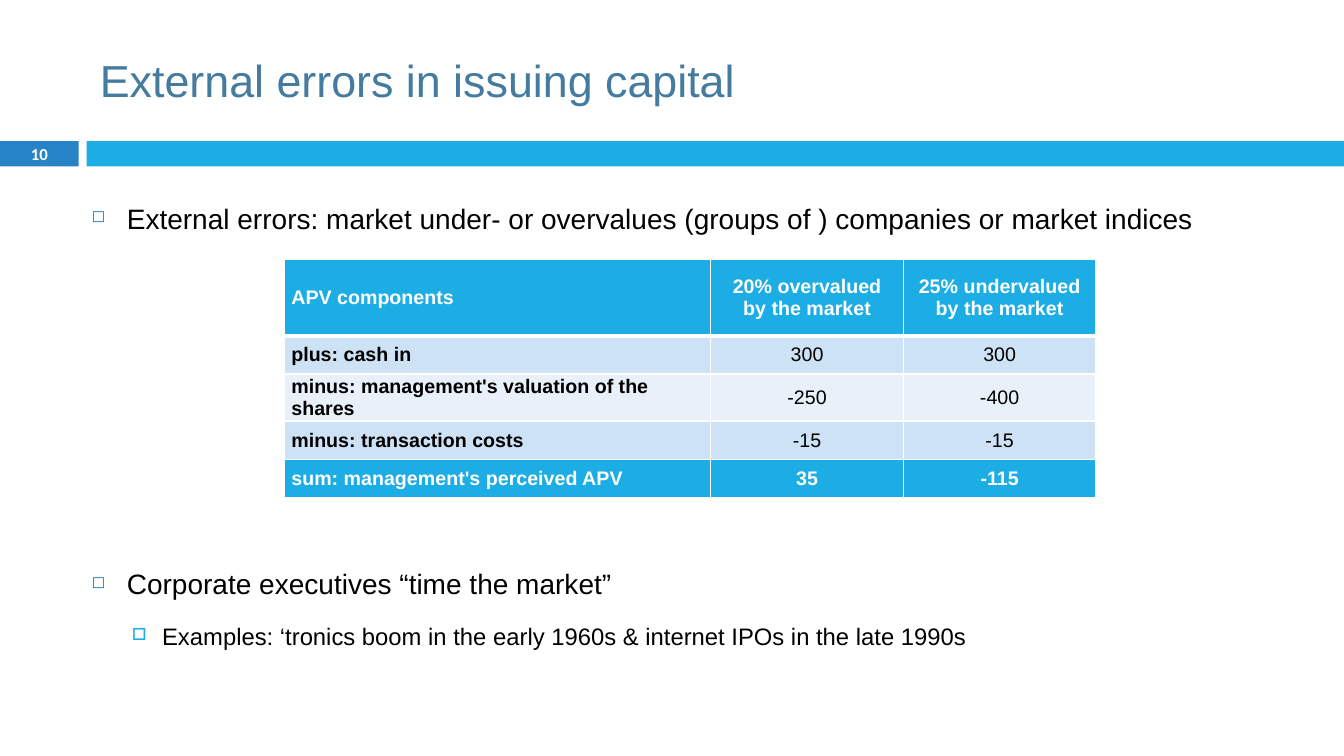
import pptx
import pptx.dml.color
import pptx.enum.shapes
import pptx.enum.text
import pptx.util
from lxml import etree
from pptx.oxml.ns import qn

WIDTH, HEIGHT = 13.33, 7.5
BLUE, CYAN, WHITE, BLACK = "2683C6", "1CADE4", "FFFFFF", "000000"
ALIGN = pptx.enum.text.PP_ALIGN
MIDDLE = pptx.enum.text.MSO_ANCHOR.MIDDLE
INCH, POINT = pptx.util.Inches, pptx.util.Pt

ROWS = [
    ("APV components", "20% overvalued\vby the market", "25% undervalued\vby the market"),
    ("plus: cash in", "300", "300"),
    ("minus: management's valuation of the shares", "-250", "-400"),
    ("minus: transaction costs", "-15", "-15"),
    ("sum: management's perceived APV", "35", "-115"),
]
COLUMN_WIDTHS = [4.23, 1.91, 1.91]
ROW_HEIGHTS = [0.76, 0.38, 0.38, 0.38, 0.38]
BANDS = ["CDE3F5", "E8F1FA"]

# Bullet levels: indents in inches, spacing in points, bullet size in percent
LEVELS = [
    dict(left=0.35, hang=0.35, before=7, bullet="◻", color=BLUE, percent=60, size=20),
    dict(left=0.7, hang=0.3, before=5.5, bullet="□", color=CYAN, percent=70, size=17),
]
TABLE_GAP = 225  # points left free for the table
POINTS = [
    (0, 0, "External errors: market under- or overvalues (groups of ) companies or market indices"),
    (0, TABLE_GAP, "Corporate executives “time the market”"),
    (1, 0, "Examples: ‘tronics boom in the early 1960s & internet IPOs in the late 1990s"),
]


def rgb(color):
    return pptx.dml.color.RGBColor.from_string(color)


def apply(target, values):
    for name, value in values.items():
        setattr(target, name, value)


def write(para, text, size, color, bold=False, font="Arial", **layout):
    """Fill one paragraph and format its text and layout."""
    para.text = text
    apply(para, layout)
    for span in para.runs:
        apply(span.font, dict(name=font, size=POINT(size), bold=bold))
        span.font.color.rgb = rgb(color)


def add_bar(page, left, width, color):
    bar = page.shapes.add_shape(pptx.enum.shapes.MSO_SHAPE.RECTANGLE,
                                INCH(left), INCH(1.4), INCH(width), INCH(0.25))
    bar.shadow.inherit = False
    bar.fill.solid()
    bar.fill.fore_color.rgb = rgb(color)
    bar.line.fill.background()
    return bar


def add_title(page, text):
    title = page.shapes.title
    apply(title, dict(left=INCH(0.89), top=INCH(0.25), width=INCH(11.89), height=INCH(1.08)))
    title.text_frame.vertical_anchor = MIDDLE
    write(title.text_frame.paragraphs[0], text, 32, "457B9E", alignment=ALIGN.LEFT)


def set_bullet(para, level):
    properties = para._p.get_or_add_pPr()
    properties.set("marL", str(INCH(level["left"])))
    properties.set("indent", str(-INCH(level["hang"])))
    color = etree.SubElement(properties, qn("a:buClr"))
    etree.SubElement(color, qn("a:srgbClr"), val=level["color"])
    etree.SubElement(properties, qn("a:buSzPct"), val=str(level["percent"] * 1000))
    etree.SubElement(properties, qn("a:buChar"), char=level["bullet"])


def add_bullets(page, points):
    box = page.shapes.add_textbox(INCH(0.81), INCH(1.78), INCH(11.36), INCH(5.39))
    frame = box.text_frame
    frame.word_wrap = True
    for index, (depth, gap, text) in enumerate(points):
        para = frame.add_paragraph() if index else frame.paragraphs[0]
        level = LEVELS[depth]
        write(para, text, level["size"], BLACK, level=depth, line_spacing=1.5,
              space_before=POINT(gap or level["before"]))
        set_bullet(para, level)


def set_borders(cell, widths):
    """Draw white borders; widths maps each side to points."""
    properties = cell._tc.get_or_add_tcPr()
    for index, (side, width) in enumerate(widths.items()):
        line = etree.Element(qn("a:ln" + side), w=str(POINT(width)))
        fill = etree.SubElement(line, qn("a:solidFill"))
        etree.SubElement(fill, qn("a:srgbClr"), val=WHITE)
        properties.insert(index, line)


def add_apv_table(page):
    last = len(ROWS) - 1
    table = page.shapes.add_table(len(ROWS), len(COLUMN_WIDTHS), INCH(2.82), INCH(2.57),
                                  INCH(sum(COLUMN_WIDTHS)), INCH(sum(ROW_HEIGHTS))).table
    for column, width in zip(table.columns, COLUMN_WIDTHS):
        column.width = INCH(width)
    for row, height in zip(table.rows, ROW_HEIGHTS):
        row.height = INCH(height)
    for r, texts in enumerate(ROWS):
        strong = r in (0, last)
        for c, text in enumerate(texts):
            cell = table.cell(r, c)
            apply(cell, dict(vertical_anchor=MIDDLE, margin_left=INCH(0.07),
                             margin_right=INCH(0.07), margin_top=0, margin_bottom=0))
            cell.fill.solid()
            cell.fill.fore_color.rgb = rgb(CYAN if strong else BANDS[(r - 1) % 2])
            write(cell.text_frame.paragraphs[0], text, 14, WHITE if strong else BLACK,
                  bold=strong or c == 0, alignment=ALIGN.CENTER if c else ALIGN.LEFT)
            set_borders(cell, dict(L=1, R=1, T=3 if r == 1 else 1, B=3 if r == 0 else 1))


def main():
    deck = pptx.Presentation()
    apply(deck, dict(slide_width=INCH(WIDTH), slide_height=INCH(HEIGHT)))
    page = deck.slides.add_slide(deck.slide_layouts.get_by_name("Title Only"))

    # Heading band with page number
    number = add_bar(page, 0, 0.78, BLUE)
    add_bar(page, 0.86, WIDTH - 0.86, CYAN)
    apply(number.text_frame, dict(vertical_anchor=MIDDLE, margin_top=0, margin_bottom=0))
    write(number.text_frame.paragraphs[0], "10", 12, WHITE, bold=True, font="Calibri",
          alignment=ALIGN.CENTER)
    add_title(page, "External errors in issuing capital")

    # Content
    add_bullets(page, POINTS)
    add_apv_table(page)
    deck.save("out.pptx")


if __name__ == "__main__":
    main()
